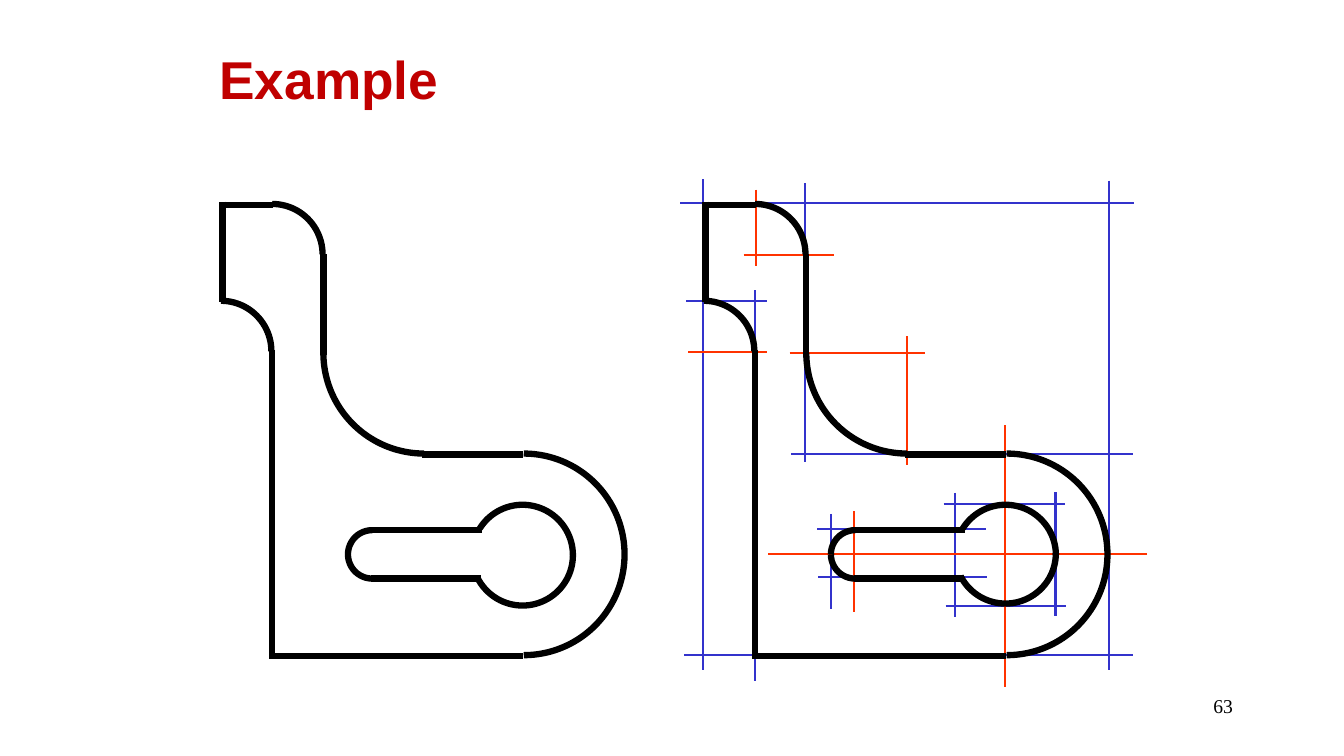
from math import cos, radians, sin

from lxml import etree
from pptx import Presentation
from pptx.dml.color import RGBColor
from pptx.enum.shapes import MSO_CONNECTOR as CONN
from pptx.enum.text import PP_ALIGN as ALIGN
from pptx.oxml.ns import qn
from pptx.util import Cm, Pt

BLUE, RED, BLACK, TITLE = "3333CC", "FF3300", "000000", "C00000"


def paint(target, color):
    target.solid()
    target.fore_color.rgb = RGBColor.from_string(color)


def line(shapes, x1, y1, x2, y2, color, width):
    c = shapes.add_connector(CONN.STRAIGHT, Cm(x1), Cm(y1), Cm(x2), Cm(y2))
    paint(c.line.fill, color)
    c.line.width = Pt(width)
    etree.SubElement(c._element.spPr, qn("a:effectLst"))


prs = Presentation()
prs.slide_width, prs.slide_height = Cm(33.87), Cm(19.05)
s = prs.slides.add_slide(prs.slide_layouts[6])

guides = {
    BLUE: [
        (19.94, 11.43, 28.55, 11.43),
        (17.71, 4.52, 17.71, 16.89),
        (17.25, 16.51, 28.55, 16.51),
        (17.15, 5.11, 28.58, 5.11),
        (17.30, 7.59, 19.33, 7.59),
        (19.02, 7.32, 19.02, 17.15),
        (20.29, 4.62, 20.29, 11.63),
        (20.94, 12.95, 20.94, 15.34),
        (20.60, 13.34, 24.84, 13.34),
        (20.62, 14.53, 24.87, 14.53),
        (26.60, 12.40, 26.60, 15.52),
        (23.83, 15.27, 26.87, 15.27),
        (23.78, 12.70, 26.85, 12.70),
        (24.06, 12.42, 24.06, 15.54),
        (27.94, 4.55, 27.94, 16.89),
    ],
    RED: [
        (25.32, 10.72, 25.32, 17.32),
        (21.52, 12.88, 21.52, 15.42),
        (19.05, 4.78, 19.05, 6.71),
        (18.74, 6.43, 21.03, 6.43),
        (19.33, 8.86, 17.35, 8.86),
        (19.90, 8.89, 23.32, 8.89),
        (22.86, 11.71, 22.86, 8.46),
        (28.91, 13.97, 19.36, 13.97),
    ],
}
for color, ends in guides.items():
    for x1, y1, x2, y2 in ends:
        line(s.shapes, x1, y1, x2, y2, color, 1.5)

edges = [
    (5.61, 5.08, 5.61, 7.62),
    (5.61, 5.16, 6.88, 5.16),
    (6.86, 8.81, 6.86, 16.56),
    (8.15, 6.40, 8.15, 8.94),
    (10.64, 11.45, 13.18, 11.45),
    (13.18, 16.53, 6.78, 16.53),
    (9.35, 13.36, 12.14, 13.36),
    (9.35, 14.58, 12.12, 14.58),
]
bends = [
    (5.57, 8.85, 1.27, -90, 0),
    (6.86, 6.41, 1.27, -90, 0),
    (10.69, 8.89, 2.54, 90, 180),
    (13.20, 13.97, 2.54, -90, 90),
]
whole_keyhole = [
    (13.17, 13.99, 1.27, -148, 153),
    (9.38, 13.97, 0.61, 90, 270),
]
split_keyhole = [
    (13.17, 13.99, 1.27, -148, 0),
    (13.17, 13.94, 1.27, 0, 153),
    (9.38, 13.97, 0.61, 180, 270),
    (9.38, 13.97, 0.61, 90, 180),
]
for shift, keyhole in ((0, whole_keyhole), (12.17, split_keyhole)):
    for x1, y1, x2, y2 in edges:
        line(s.shapes, x1 + shift, y1, x2 + shift, y2, BLACK, 4.5)
    for cx, cy, radius, start, end in bends + keyhole:
        quarters = [a for a in range(-90, 271, 90) if start < a < end]
        points = [
            (
                Cm(cx + shift + radius * cos(radians(a))),
                Cm(cy + radius * sin(radians(a))),
            )
            for a in [start, *quarters, end]
        ]
        builder = s.shapes.build_freeform(*points[0])
        builder.add_line_segments(points[1:], close=False)
        sp = builder.convert_to_shape()
        outline = sp._element.find(".//" + qn("a:path"))
        for segment in outline.findall(qn("a:lnTo")):
            outline.remove(segment)
        arc = etree.SubElement(outline, qn("a:arcTo"))
        arc.set("wR", str(Cm(radius)))
        arc.set("hR", str(Cm(radius)))
        arc.set("stAng", str(start % 360 * 60000))
        arc.set("swAng", str((end - start) * 60000))
        sp.shadow.inherit = False
        sp.fill.background()
        paint(sp.line.fill, BLACK)
        sp.line.width = Pt(4.5)

labels = [
    ("Example", 5.28, 1.04, 6.02, 1.85, "Arial", 38, TITLE, True, ALIGN.LEFT),
    ("63", 24.28, 17.35, 7.04, 1.27, "Times New Roman", 14, BLACK, False, ALIGN.RIGHT),
]
for text, x, y, w, h, font, size, color, bold, align in labels:
    tf = s.shapes.add_textbox(Cm(x), Cm(y), Cm(w), Cm(h)).text_frame
    tf.word_wrap = not bold
    tf.text = text
    p = tf.paragraphs[0]
    p.alignment = align
    r = p.runs[0]
    r.font.name, r.font.size, r.font.bold = font, Pt(size), bold
    paint(r.font.fill, color)

prs.save("out.pptx")
